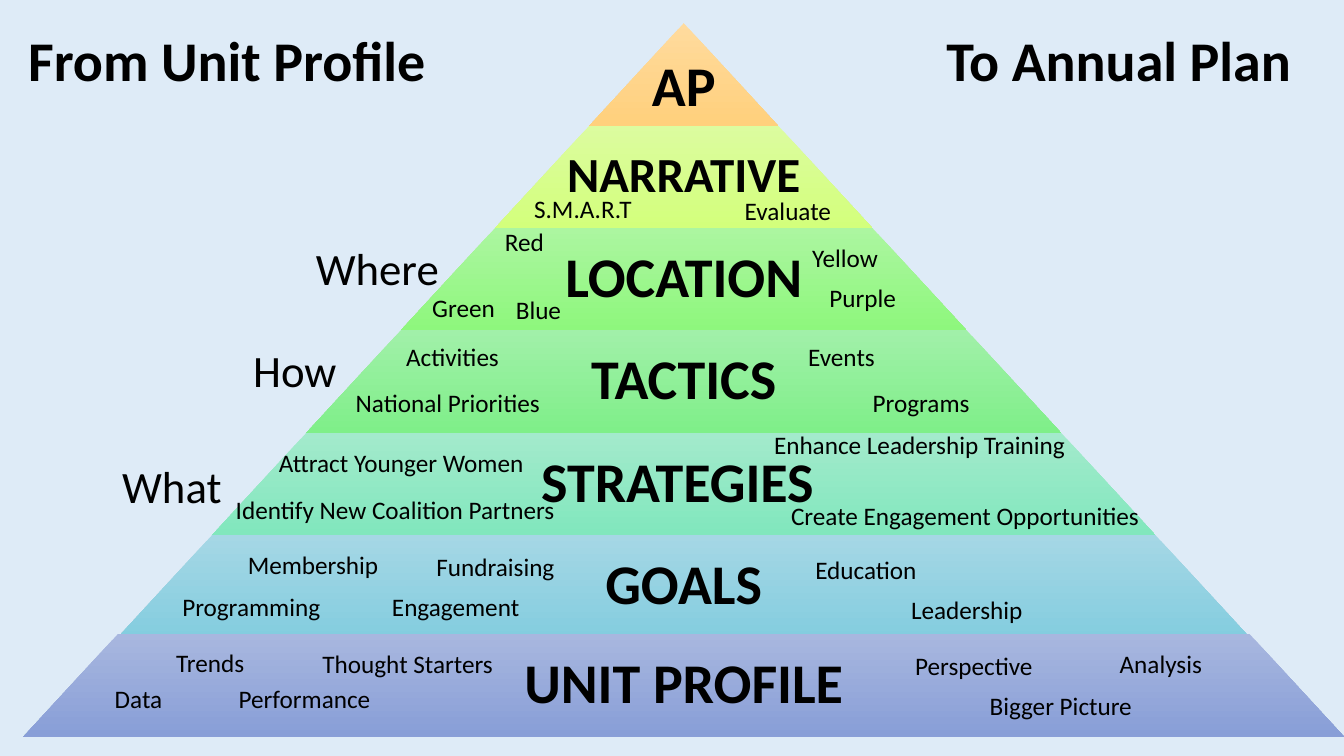
"""Build the seven-tier planning pyramid, from Unit Profile to Annual Plan."""
from pptx import Presentation
from pptx.dml.color import RGBColor
from pptx.enum.shapes import MSO_SHAPE
from pptx.enum.text import MSO_ANCHOR, MSO_AUTO_SIZE, PP_ALIGN
from pptx.util import Pt

COLORS = {
    "background": "DEEBF7",
    "text": "000000",
    "AP": ("FFDB9E", "FFD07C"),
    "NARRATIVE": ("DCFC9F", "D3FF7C"),
    "LOCATION": ("ACF6A0", "8EF77D"),
    "TACTICS": ("A1F0A9", "7FEF89"),
    "STRATEGIES ": ("A3EACC", "81E7BD"),
    "GOALS": ("A5D7E5", "84CDDF"),
    "UNIT PROFILE": ("A8B7DF", "889ED7"),
}
TIERS = ["AP", "NARRATIVE", "LOCATION", "TACTICS", "STRATEGIES ", "GOALS", "UNIT PROFILE"]
CENTER, TOP, STEP, TIER_H, BASE_TOP = 488.4, 16.6, 73.1, 73.3, 452.9
BASE_W = 943.2
WIDTH_STEP = BASE_W / len(TIERS)

LABELS = [
    ("S.M.A.R.T", 374.4, 134.6, 85), ("Evaluate", 524.9, 136.1, 77),
    ("Red", 353.5, 158.4, 42.5), ("Yellow", 573.1, 169.9, 61.9),
    ("Green", 301.7, 205.2, 59.8), ("Blue", 361.4, 206.6, 47.5),
    ("Purple", 585.4, 198, 62.6),
    ("Activities", 283, 240.5, 81.4), ("Events", 570.2, 240.5, 62.6),
    ("National Priorities", 247, 272.9, 147.6), ("Programs", 616.3, 272.9, 84.2),
    ("Attract Younger Women", 192.2, 316.1, 198),
    ("Enhance Leadership Training", 545.8, 303.1, 225.4),
    ("Identify New Coalition Partners", 161.3, 349.9, 243.4),
    ("Create Engagement Opportunities", 558, 354.2, 266.4),
    ("Membership", 169.9, 388.8, 108.7), ("Fundraising", 304.6, 390.2, 100.1),
    ("Education", 575.3, 392.4, 87.8), ("Programming", 123.1, 419, 113.8),
    ("Engagement", 272.9, 419, 106.6), ("Leadership", 643.7, 421.2, 95),
    ("Trends", 118.8, 458.6, 63.4), ("Thought Starters", 223.2, 459.4, 137.5),
    ("Perspective", 646.6, 460.8, 99.4), ("Analysis", 792.7, 459.4, 74.2),
    ("Data", 74.9, 484.6, 53.3), ("Performance", 163.4, 484.6, 109.4),
    ("Bigger Picture", 699.8, 489.6, 117.4),
]
QUESTIONS = [("Where", 170.6, 168.5), ("How", 111.6, 241.2), ("What", 23.8, 324)]
TITLES = [("From Unit Profile", 13, 620.6), ("To Annual Plan", 668.9, 269.3)]


def add_text(text, left, top, width, height, size, bold=False, align=PP_ALIGN.LEFT):
    tf = s.shapes.add_textbox(Pt(left), Pt(top), Pt(width), Pt(height)).text_frame
    tf.text = text
    tf.word_wrap = True
    p = tf.paragraphs[0]
    p.alignment = align
    r = p.runs[0]
    r.font.name = "Calibri"
    r.font.size = Pt(size)
    r.font.bold = bold
    r.font.color.rgb = RGBColor.from_string(COLORS["text"])
    return tf


prs = Presentation()
prs.slide_width, prs.slide_height = Pt(960), Pt(540)
s = prs.slides.add_slide(prs.slide_layouts[6])
s.background.fill.solid()
s.background.fill.fore_color.rgb = RGBColor.from_string(COLORS["background"])

for i, name in enumerate(TIERS):
    width = WIDTH_STEP * (i + 1)
    top = BASE_TOP if name == TIERS[-1] else TOP + STEP * i
    sp = s.shapes.add_shape(MSO_SHAPE.TRAPEZOID, Pt(CENTER - width / 2), Pt(top),
                            Pt(width), Pt(TIER_H))
    sp.adjustments[0] = 0.92
    sp.shadow.inherit = False
    sp.line.fill.background()
    sp.fill.gradient()
    sp.fill.gradient_angle = 270
    for stop, color in zip(sp.fill.gradient_stops, COLORS[name]):
        stop.color.rgb = RGBColor.from_string(color)

    text_w = width if name == "AP" else width * 0.65
    tf = add_text(name, CENTER - text_w / 2, top, text_w, TIER_H,
                  35 if name == "NARRATIVE" else 40, True, PP_ALIGN.CENTER)
    tf.vertical_anchor = MSO_ANCHOR.MIDDLE
    tf.margin_left = tf.margin_right = tf.margin_top = tf.margin_bottom = Pt(4)
    if name == "AP":
        tf.margin_top = Pt(24)
    tf.paragraphs[0].line_spacing = 0.9

for text, left, width in TITLES:
    tf = add_text(text, left, 13.7, width, 63.4, 40, True)
    tf.vertical_anchor = MSO_ANCHOR.MIDDLE
    tf.paragraphs[0].line_spacing = 0.9

for text, left, top, width in LABELS:
    tf = add_text(text, left, top, width, 28.8, 18)
    tf.word_wrap = False
    tf.auto_size = MSO_AUTO_SIZE.SHAPE_TO_FIT_TEXT

for text, left, top in QUESTIONS:
    tf = add_text(text, left, top, 198, 46.1, 32, align=PP_ALIGN.CENTER)
    tf.auto_size = MSO_AUTO_SIZE.SHAPE_TO_FIT_TEXT

prs.save("out.pptx")
